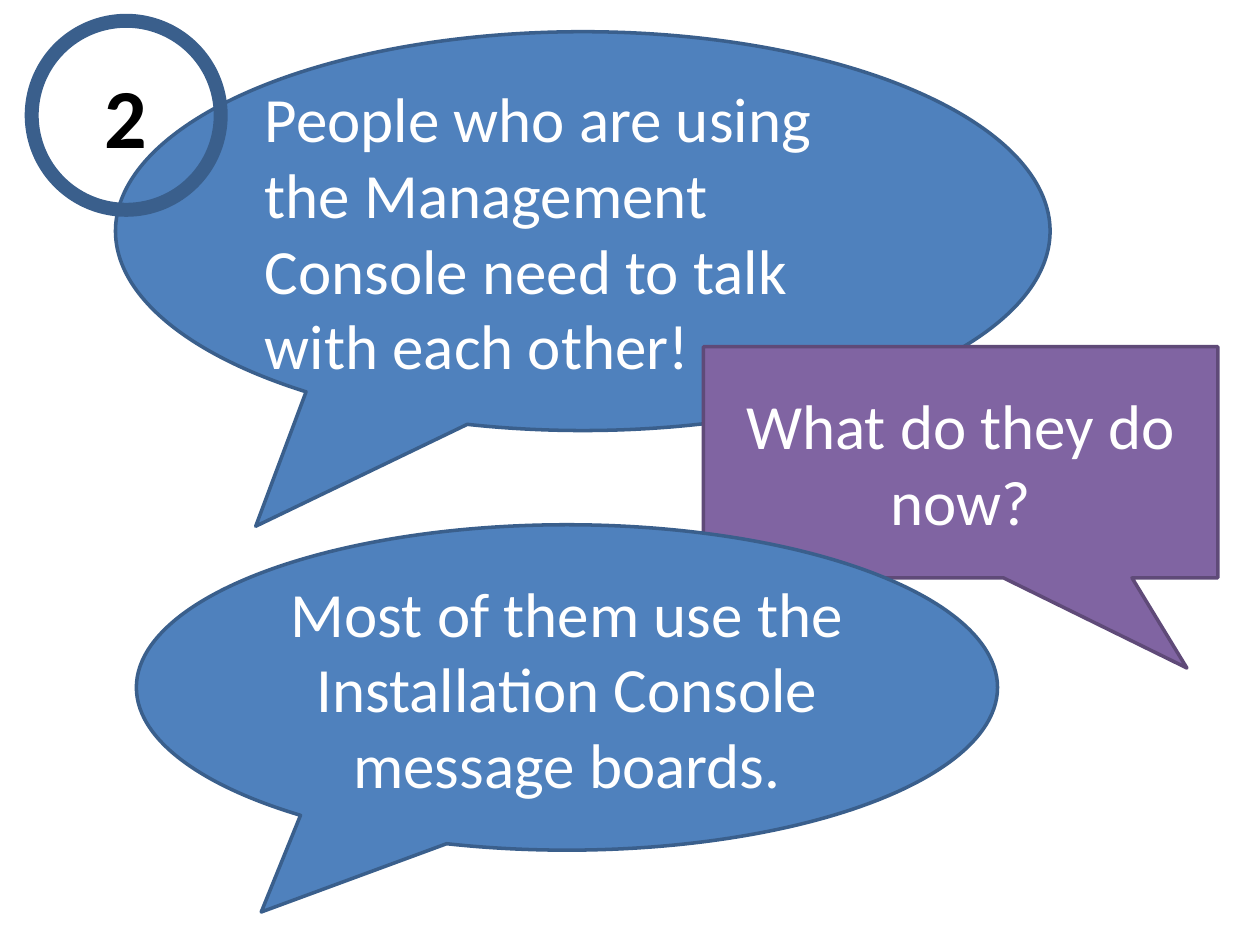
from pptx import Presentation
from pptx import util as u
from pptx.dml.color import RGBColor
from pptx.enum import shapes, text

COLORS = {
    "blue": "4F81BD",
    "blue_edge": "3A5F8C",
    "purple": "8064A2",
    "purple_edge": "5F4A78",
    "white": "FFFFFF",
    "black": "000000",
}


def rgb(name):
    return RGBColor.from_string(COLORS[name])


def write(tf, content, size=36, color="white", bold=False, align=text.PP_ALIGN.CENTER):
    tf.word_wrap = True
    tf.vertical_anchor = text.MSO_ANCHOR.MIDDLE
    p = tf.paragraphs[0]
    p.alignment = align
    r = p.add_run()
    r.text = content
    r.font.name = "Calibri"
    r.font.size = u.Pt(size)
    r.font.bold = bold
    r.font.color.rgb = rgb(color)


class Deck:
    """Holds the slide being built and the style of its shapes."""

    def __init__(self, prs):
        self.slide = prs.slides.add_slide(prs.slide_layouts[6])
        self.edge_width = 2
        self.ring_width = 8

    def outlined(self, kind, box, edge, width):
        sp = self.slide.shapes.add_shape(kind, *(u.Cm(v) for v in box))
        sp.shadow.inherit = False
        sp.line.color.rgb = rgb(edge)
        sp.line.width = u.Pt(width)
        return sp

    def bubble(self, kind, box, tail, color, content, **style):
        """Speech bubble; tail is the tip's offset from the centre, as a share of the size."""
        sp = self.outlined(kind, box, color + "_edge", self.edge_width)
        sp.fill.solid()
        sp.fill.fore_color.rgb = rgb(color)
        sp.adjustments[0], sp.adjustments[1] = tail
        write(sp.text_frame, content, **style)

    def number_ring(self, box, number):
        sp = self.outlined(shapes.MSO_SHAPE.OVAL, box, "blue_edge", self.ring_width)
        sp.fill.background()
        write(sp.text_frame, number, size=48, color="black", bold=True)


def main():
    prs = Presentation()
    prs.slide_width, prs.slide_height = u.Cm(25.4), u.Cm(19.05)
    deck = Deck(prs)
    oval = shapes.MSO_SHAPE.OVAL_CALLOUT
    rectangle = shapes.MSO_SHAPE.RECTANGULAR_CALLOUT

    deck.bubble(oval, (2.33, 0.64, 18.84, 8.04), (-0.35, 0.74), "blue",
                "People who are using the Management Console need to talk with each other!",
                align=text.PP_ALIGN.LEFT)
    deck.bubble(rectangle, (14.18, 6.99, 10.37, 4.66), (0.44, 0.89), "purple",
                "What do they do now?")
    deck.bubble(oval, (2.75, 10.58, 17.36, 6.56), (-0.355, 0.69), "blue",
                "Most of them use the Installation Console message boards.")
    deck.number_ring((0.64, 0.42, 3.81, 3.81), "2")

    prs.save("out.pptx")


if __name__ == "__main__":
    main()
